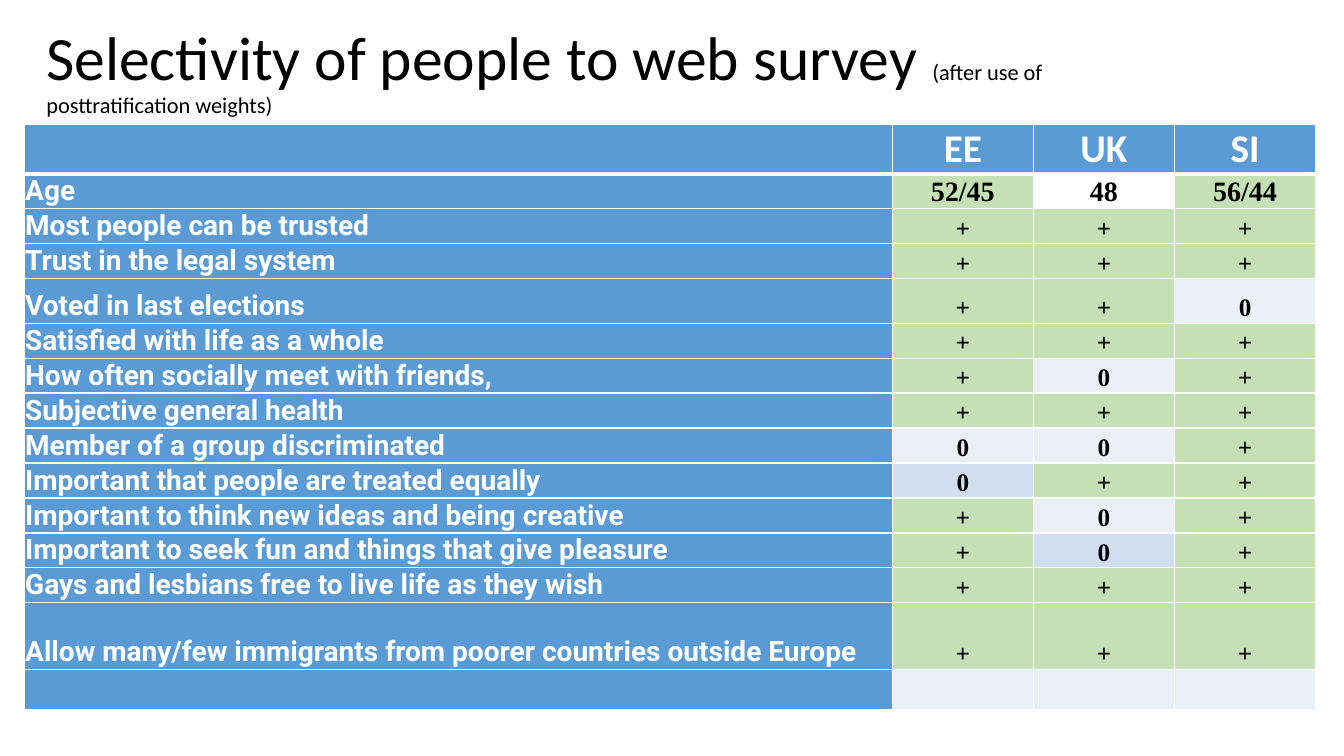
import pptx
import pptx.util
import pptx.dml.color
import pptx.enum.text
import pptx.oxml.ns
import lxml.etree

ALIGN = pptx.enum.text.PP_ALIGN
ANCHOR = pptx.enum.text.MSO_ANCHOR

COUNTRIES = ["", "EE", "UK", "SI"]
FINDINGS = [
    ("Age", "52/45", "48", "56/44"),
    ("Most people can be trusted", "+", "+", "+"),
    ("Trust in the legal system", "+", "+", "+"),
    ("Voted in last elections", "+", "+", "0"),
    ("Satisfied with life as a whole", "+", "+", "+"),
    ("How often socially meet with friends,", "+", "0", "+"),
    ("Subjective general health", "+", "+", "+"),
    ("Member of a group discriminated", "0", "0", "+"),
    ("Important that people are treated equally", "0", "+", "+"),
    ("Important to think new ideas and being creative", "+", "0", "+"),
    ("Important to seek fun and things that give pleasure", "+", "0", "+"),
    ("Gays and lesbians free to live life as they wish", "+", "+", "+"),
    ("Allow many/few immigrants from poorer countries outside Europe", "+", "+", "+"),
    ("", "", "", ""),
]
COLUMN_SHARES = [64.59, 10.5, 10.5, 10.5]
ROW_SHARE = 4.53
SPECIAL_ROW_SHARES = {0: 6.27, 4: 5.87, 13: 8.8, 14: 5.33}


class SurveySlide:
    colours = {
        "label": "5B9BD5",
        "selective": "C5E0B4",
        "even band": "EAEFF7",
        "odd band": "D2DEEF",
        "white": "FFFFFF",
        "black": "000000",
    }
    formats = {
        "title": {"name": "Calibri", "size": 44, "bold": False, "color": "black"},
        "remark": {"name": "Calibri", "size": 16, "bold": False, "color": "black"},
        "country": {"name": "Calibri", "size": 28, "bold": True, "color": "white"},
        "topic": {"name": "Roboto", "size": 20, "bold": True, "color": "white"},
        "age": {"name": "Times New Roman", "size": 20, "bold": True, "color": "black"},
        "sign": {"name": "Times New Roman", "size": 18, "bold": True, "color": "black"},
    }

    def __init__(self, deck):
        self.deck = deck
        self.slide = deck.slides.add_slide(deck.slide_layouts[5])

    def across(self, share):
        return round(self.deck.slide_width * share / 100)

    def down(self, share):
        return round(self.deck.slide_height * share / 100)

    def rgb(self, colour):
        return pptx.dml.color.RGBColor.from_string(self.colours[colour])

    def add_words(self, paragraph, words, style):
        run = paragraph.add_run()
        run.text = words
        for attribute, value in self.formats[style].items():
            if attribute == "color":
                run.font.color.rgb = self.rgb(value)
            else:
                setattr(run.font, attribute, pptx.util.Pt(value) if attribute == "size" else value)

    def title(self, left, top, width, height, parts):
        heading = self.slide.shapes.title
        place = {"left": self.across(left), "top": self.down(top),
                 "width": self.across(width), "height": self.down(height)}
        for attribute, value in place.items():
            setattr(heading, attribute, value)
        heading.text_frame.vertical_anchor = ANCHOR.MIDDLE
        heading.text_frame.word_wrap = True
        heading.text_frame.auto_size = pptx.enum.text.MSO_AUTO_SIZE.NONE
        line = heading.text_frame.paragraphs[0]
        line.alignment = ALIGN.LEFT
        line.line_spacing = 0.9
        for words, style in parts:
            self.add_words(line, words, style)

    def borders(self, cell, widths):
        properties = cell._tc.get_or_add_tcPr()
        for position, (side, width) in enumerate(widths.items()):
            edge = lxml.etree.Element(pptx.oxml.ns.qn(f"a:ln{side}"), w=str(pptx.util.Pt(width)))
            paint = lxml.etree.SubElement(edge, pptx.oxml.ns.qn("a:solidFill"))
            lxml.etree.SubElement(paint, pptx.oxml.ns.qn("a:srgbClr"), val=self.colours["white"])
            properties.insert(position, edge)

    def cell(self, cell, words, style, fill, widths):
        margin = pptx.util.Inches(0.01)
        layout = {"margin_left": margin, "margin_right": margin, "margin_top": margin,
                  "margin_bottom": margin, "vertical_anchor": ANCHOR.BOTTOM}
        for attribute, value in layout.items():
            setattr(cell, attribute, value)
        if fill:
            cell.fill.solid()
            cell.fill.fore_color.rgb = self.rgb(fill)
        else:
            cell.fill.background()
        self.borders(cell, widths)
        line = cell.text_frame.paragraphs[0]
        line.alignment = ALIGN.LEFT if style == "topic" else ALIGN.CENTER
        if words:
            self.add_words(line, words, style)

    def cell_look(self, row, column, words):
        if row == 0:
            return "country", "label"
        if column == 0:
            return "topic", "label"
        style = "age" if row == 1 else "sign"
        if words in ("0", ""):
            return style, "odd band" if row % 2 else "even band"
        return style, None if words == "48" else "selective"

    def table(self, left, top, column_shares, row_shares, rows):
        grid = self.slide.shapes.add_table(
            len(rows), len(column_shares), self.across(left), self.down(top),
            self.across(sum(column_shares)), self.down(sum(row_shares))).table
        for column, share in zip(grid.columns, column_shares):
            column.width = self.across(share)
        for row, share in zip(grid.rows, row_shares):
            row.height = self.down(share)
        for row, entries in enumerate(rows):
            widths = {"L": 1, "R": 1, "T": 3 if row == 1 else 1, "B": 3 if row == 0 else 1}
            for column, words in enumerate(entries):
                style, fill = self.cell_look(row, column, words)
                self.cell(grid.cell(row, column), words, style, fill, widths)


def main():
    deck = pptx.Presentation()
    deck.slide_width = pptx.util.Inches(13.33)
    deck.slide_height = pptx.util.Inches(7.5)
    survey = SurveySlide(deck)
    rows = [COUNTRIES, *FINDINGS]
    row_shares = [SPECIAL_ROW_SHARES.get(row, ROW_SHARE) for row in range(len(rows))]
    survey.table(1.8, 16.4, COLUMN_SHARES, row_shares, rows)
    survey.title(2.7, 0, 86.27, 19.33, [
        ("Selectivity of people to web survey ", "title"),
        ("(after use of posttratification weights)", "remark"),
    ])
    deck.save("out.pptx")


if __name__ == "__main__":
    main()
